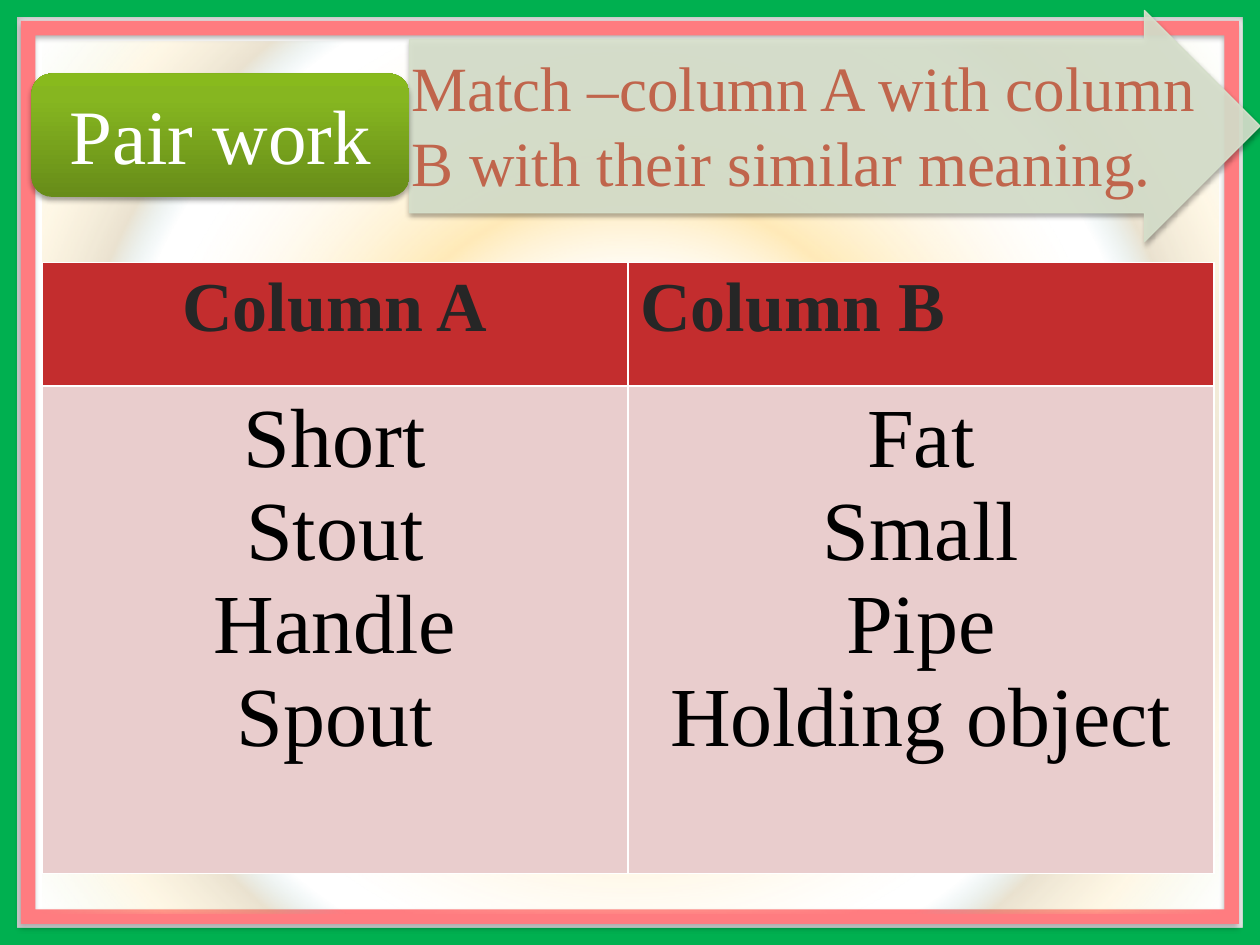
from lxml.etree import SubElement
from pptx import Presentation
from pptx.dml.color import RGBColor
from pptx.enum.shapes import MSO_SHAPE
from pptx.enum.text import MSO_ANCHOR, MSO_AUTO_SIZE, PP_ALIGN
from pptx.oxml.ns import qn
from pptx.util import Inches, Pt

COLORS = {
    "green": "00B050", "pink": "FF7C80", "arrow": "D9E2CE", "arrow_edge": "D4DEC9",
    "header": "C32D2E", "body": "E9CDCD", "white": "FFFFFF", "black": "000000",
    "dark": "262626", "rust": "C0654C",
}
FONT = "Times New Roman"

deck = Presentation()
deck.slide_width, deck.slide_height = Inches(10), Inches(7.5)
column, row = deck.slide_width / 120, deck.slide_height / 90
slide = deck.slides.add_slide(deck.slide_layouts[5])


def area(left, top, width, height):
    return [int(left * column), int(top * row), int(width * column), int(height * row)]


def add_color(parent, color, alpha=100):
    node = SubElement(parent, qn("a:srgbClr"), val=color)
    if alpha < 100:
        SubElement(node, qn("a:alpha"), val=str(alpha * 1000))


glow = [(18, "B0BAD7", 24), (28, "FFE39D", 9), (39, "FED46C", 48), (67, "FFF1CE", 0),
        (71, "7EC3D4", 0), (77, "C6B07E", 36), (87, "FFE39D", 25), (100, "D0E4A6", 0)]
button = [(0, "678C19", 100), (80, "86B620", 100), (100, "88BA1D", 100)]
soft_edge = (35, 3.1, 1.8, 90)
panels = [
    (MSO_SHAPE.FRAME, (0, 0, 120, 90), [0.018], [(0, COLORS["green"], 100)], (30, 4.5, 2.6, 53)),
    (MSO_SHAPE.FRAME, (2, 2, 116, 86), [0.016], [(0, COLORS["pink"], 100)], (32, 3.5, 2.2, 90)),
    (MSO_SHAPE.RECTANGLE, (4, 4, 112, 83), [], glow, None),
    (MSO_SHAPE.RIGHT_ARROW, (39, 1, 81, 22), [0.75, 0.5], [(0, COLORS["arrow"], 90)], soft_edge),
    (MSO_SHAPE.ROUNDED_RECTANGLE, (3, 7, 36, 11.75), [], button, soft_edge),
]
for preset, place, adjustments, stops, shadow in panels:
    panel = slide.shapes.add_shape(preset, *area(*place))
    for index, value in enumerate(adjustments):
        panel.adjustments[index] = value
    panel.shadow.inherit = False
    panel.fill.background()
    panel.line.fill.background()
    if preset == MSO_SHAPE.RIGHT_ARROW:
        panel.line.color.rgb = RGBColor.from_string(COLORS["arrow_edge"])
        panel.line.width = Pt(0.75)
    properties = panel._element.spPr
    paint = properties.find(qn("a:noFill"))
    if len(stops) == 1:
        paint.tag = qn("a:solidFill")
        add_color(paint, *stops[0][1:])
    else:
        paint.tag = qn("a:gradFill")
        stop_list = SubElement(paint, qn("a:gsLst"))
        for position, color, alpha in stops:
            stop = SubElement(stop_list, qn("a:gs"), pos=str(position * 1000))
            add_color(stop, color, alpha)
        if stops is glow:
            path = SubElement(paint, qn("a:path"), path="circle")
            SubElement(path, qn("a:fillToRect"), dict.fromkeys("ltrb", "50000"))
        else:
            SubElement(paint, qn("a:lin"), ang=str(270 * 60000), scaled="0")
    if shadow:
        opacity, blur, distance, angle = shadow
        cast = SubElement(properties.find(qn("a:effectLst")), qn("a:outerShdw"),
                          blurRad=str(Pt(blur)), dist=str(Pt(distance)),
                          dir=str(angle * 60000), rotWithShape="0")
        add_color(cast, COLORS["black"], opacity)

matches = slide.shapes.add_table(2, 2, *area(4, 25, 111.6, 58.2)).table
matches.rows[0].height, matches.rows[1].height = Inches(0.98), Inches(3.87)
header_style = {"size": Pt(40), "bold": True, "name": FONT}
word_style = {"size": Pt(48), "bold": False, "name": FONT}
columns = [
    ("Column A", PP_ALIGN.CENTER, ["Short", "Stout", "Handle", "Spout"]),
    ("Column B", PP_ALIGN.LEFT, ["Fat", "Small", "Pipe", "Holding object"]),
]
for column_index, (heading, heading_align, words) in enumerate(columns):
    rows = [([heading], heading_align, header_style, "header", "dark"),
            (words, PP_ALIGN.CENTER, word_style, "body", "black")]
    for row_index, (lines, align, style, fill, ink) in enumerate(rows):
        cell = matches.cell(row_index, column_index)
        cell.text = "\n".join(lines)
        for paragraph in cell.text_frame.paragraphs:
            paragraph.alignment = align
            paragraph.font.color.rgb = RGBColor.from_string(COLORS[ink])
            for attribute, value in style.items():
                setattr(paragraph.font, attribute, value)
        cell_properties = cell._tc.get_or_add_tcPr()
        for side in ("a:lnL", "a:lnR", "a:lnT", "a:lnB"):
            border = SubElement(cell_properties, qn(side), w=str(Pt(1)))
            add_color(SubElement(border, qn("a:solidFill")), COLORS["white"])
        cell.fill.solid()
        cell.fill.fore_color.rgb = RGBColor.from_string(COLORS[fill])

instruction = slide.shapes.add_textbox(*area(38, 4, 79, 15.75))
activity = slide.shapes.title
activity.left, activity.top, activity.width, activity.height = area(4, 8, 34, 10.5)
slide.shapes._spTree.append(activity._element)
captions = [
    (instruction, "Match –column A with column B with their similar meaning.", "rust",
     {"size": Pt(36), "name": FONT}, {"alignment": PP_ALIGN.LEFT},
     {"vertical_anchor": MSO_ANCHOR.TOP, "auto_size": MSO_AUTO_SIZE.SHAPE_TO_FIT_TEXT}),
    (activity, "Pair work", "white",
     {"size": Pt(44), "name": FONT}, {"alignment": PP_ALIGN.CENTER, "line_spacing": 0.9},
     {"vertical_anchor": MSO_ANCHOR.MIDDLE, "auto_size": MSO_AUTO_SIZE.NONE}),
]
for caption, wording, ink, font_format, paragraph_format, frame_format in captions:
    frame = caption.text_frame
    frame.text = wording
    frame.word_wrap = True
    paragraph = frame.paragraphs[0]
    paragraph.font.color.rgb = RGBColor.from_string(COLORS[ink])
    for target, values in ((paragraph.font, font_format), (paragraph, paragraph_format),
                           (frame, frame_format)):
        for attribute, value in values.items():
            setattr(target, attribute, value)

deck.save("out.pptx")
